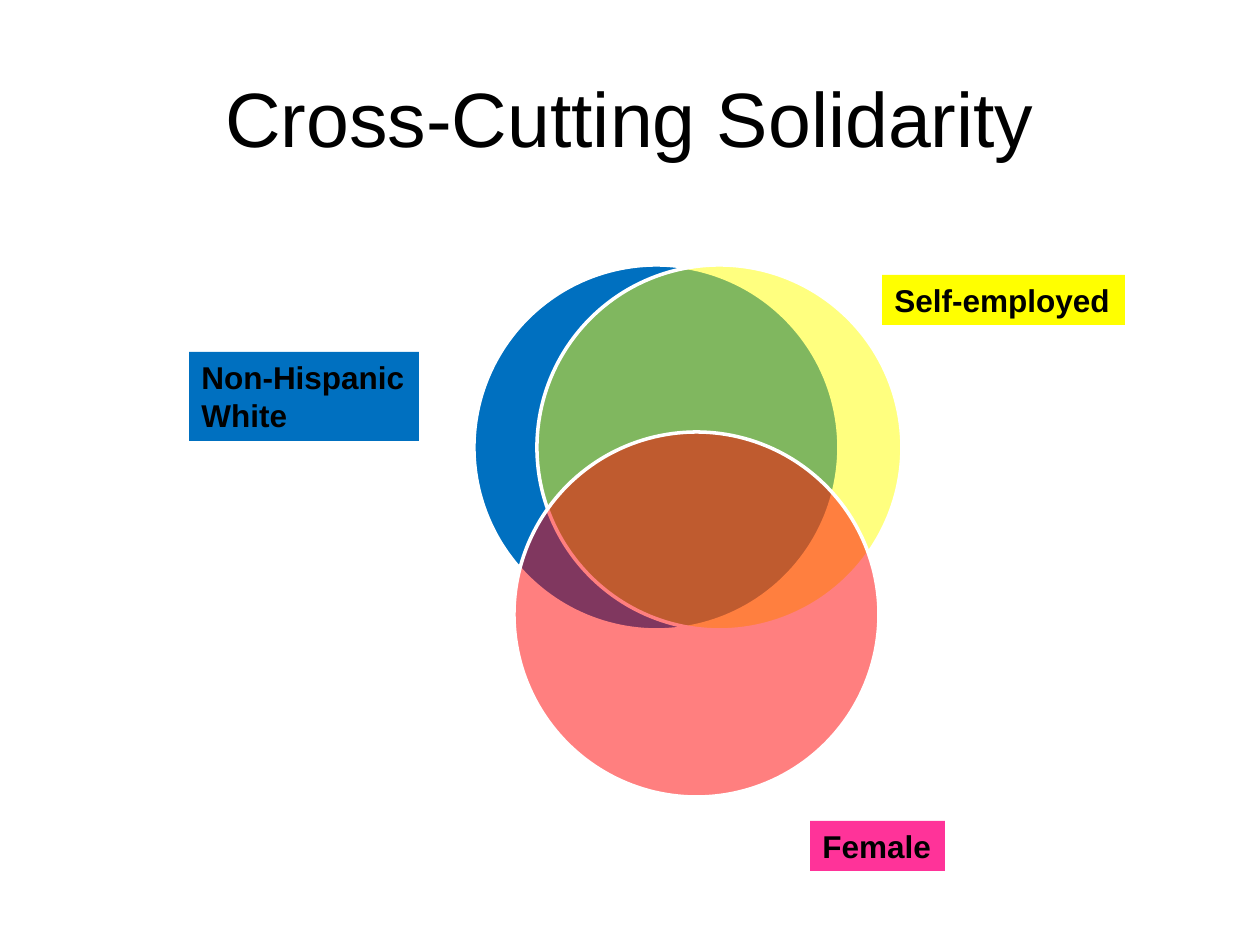
from lxml import etree
from pptx import Presentation
from pptx.dml.color import RGBColor
from pptx.enum.shapes import MSO_SHAPE
from pptx.enum.text import MSO_ANCHOR, MSO_AUTO_SIZE, PP_ALIGN
from pptx.oxml.ns import qn
from pptx.util import Pt

OVAL = MSO_SHAPE.OVAL
TOP, MIDDLE = MSO_ANCHOR.TOP, MSO_ANCHOR.MIDDLE
LEFT, CENTER = PP_ALIGN.LEFT, PP_ALIGN.CENTER
FIT, FIXED = MSO_AUTO_SIZE.SHAPE_TO_FIT_TEXT, MSO_AUTO_SIZE.NONE

SCALE = 914400 / 126
FONT = "Arial"
COLORS = {
    "white": "FFFFFF",
    "black": "000000",
    "blue": "0070C0",
    "yellow": "FFFF00",
    "red": "FF0000",
    "pink": "FF3399",
}

TITLE = "Cross-Cutting Solidarity"
TITLE_BOX = (63, 38, 1134, 157)
DIAMETER = 365
CIRCLES = [
    ((474, 265), "blue", 100),
    ((537, 265), "yellow", 50),
    ((514, 432), "red", 50),
]
LABELS = [
    (["Non-Hispanic", "White"], (189, 352, 230, 89), "blue"),
    (["Female"], (810, 821, 135, 50), "pink"),
    (["Self-employed"], (882, 275, 243, 50), "yellow"),
]


def px(*lengths):
    return [round(length * SCALE) for length in lengths]


def rgb(name):
    return RGBColor.from_string(COLORS[name])


def add_text(slide, lines, box, size, bold=False, align=LEFT, anchor=TOP,
             fill=None, wrap=False, fit=FIT):
    holder = slide.shapes.add_textbox(*px(*box))
    if fill:
        holder.fill.solid()
        holder.fill.fore_color.rgb = rgb(fill)
    frame = holder.text_frame
    frame.word_wrap = wrap
    frame.auto_size = fit
    frame.vertical_anchor = anchor
    frame.text = "\n".join(lines)
    for paragraph in frame.paragraphs:
        paragraph.alignment = align
        font = paragraph.runs[0].font
        font.name, font.size, font.bold = FONT, Pt(size), bold
        font.color.rgb = rgb("black")


def add_circle(shapes, corner, color, opacity):
    circle = shapes.add_shape(OVAL, *px(*corner, DIAMETER, DIAMETER))
    circle.shadow.inherit = False
    circle.fill.solid()
    circle.fill.fore_color.rgb = rgb(color)
    circle.line.color.rgb = rgb("white")
    circle.line.width = Pt(2)
    if opacity < 100:
        tint = circle._element.spPr.find(qn("a:solidFill")).find(qn("a:srgbClr"))
        etree.SubElement(tint, qn("a:alpha")).set("val", str(opacity * 1000))


def main():
    deck = Presentation()
    deck.slide_width, deck.slide_height = px(1260, 945)
    slide = deck.slides.add_slide(deck.slide_layouts[6])
    add_text(slide, [TITLE], TITLE_BOX, 44, align=CENTER, anchor=MIDDLE,
             wrap=True, fit=FIXED)
    venn = slide.shapes.add_group_shape()
    for corner, color, opacity in CIRCLES:
        add_circle(venn.shapes, corner, color, opacity)
    for lines, box, color in LABELS:
        add_text(slide, lines, box, 18, bold=True, fill=color)
    deck.save("out.pptx")


if __name__ == "__main__":
    main()
